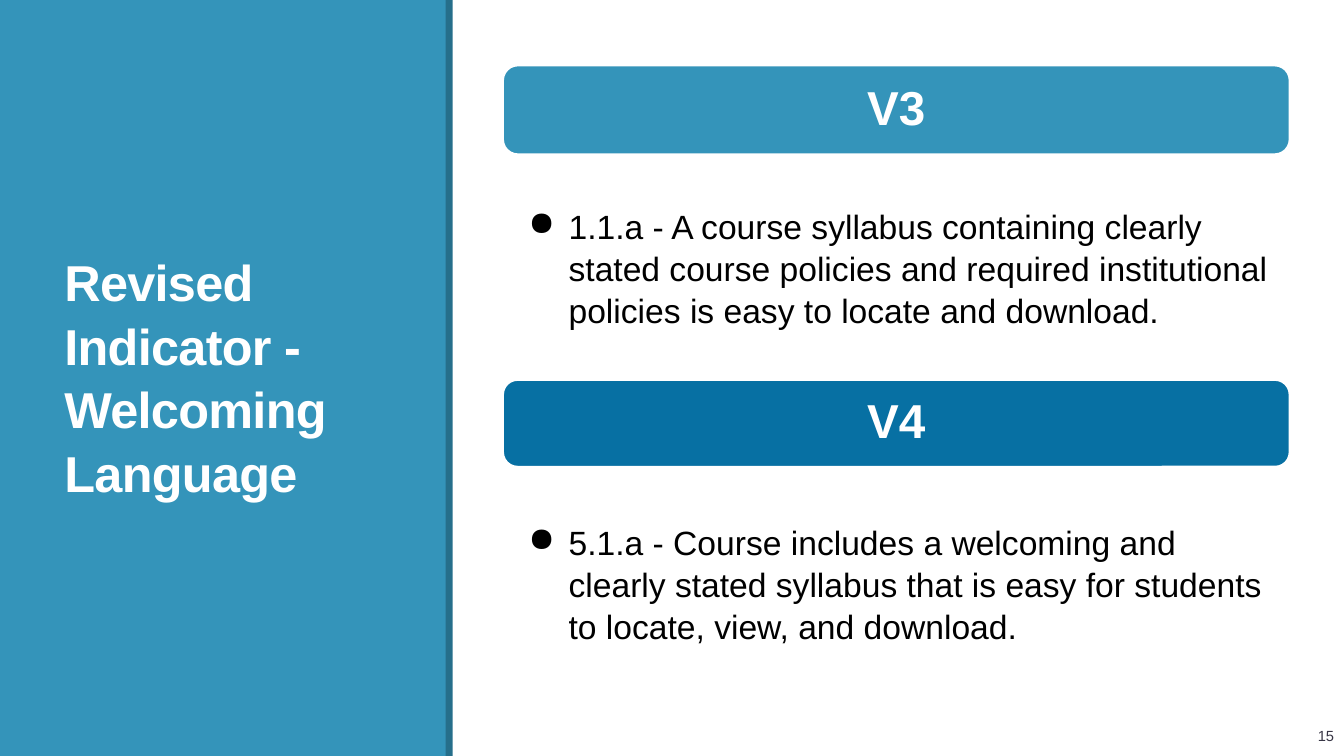
from lxml import etree
from pptx import Presentation
from pptx import util as u
from pptx.dml.color import RGBColor
from pptx.enum import shapes, text
from pptx.oxml import ns

WHITE = RGBColor(0xFF, 0xFF, 0xFF)
BLACK = RGBColor(0x00, 0x00, 0x00)
SLATE = RGBColor(0x37, 0x35, 0x45)
TEAL = RGBColor(0x34, 0x94, 0xBA)
DARK_TEAL = RGBColor(0x26, 0x6F, 0x8B)
BLUE = RGBColor(0x07, 0x70, 0xA3)

SECTION_LEFT, SECTION_WIDTH = 4.99, 7.8
# heading, colour, bar top, bar height, body height, body
SECTIONS = [
    ("V3", TEAL, 0.65, 0.88, 2.24,
     "1.1.a - A course syllabus containing clearly stated course policies "
     "and required institutional policies is easy to locate and download."),
    ("V4", BLUE, 3.77, 0.86, 2.31,
     "5.1.a - Course includes a welcoming and clearly stated syllabus "
     "that is easy for students to locate, view, and download."),
]


class SlideBuilder:
    font_name = "Arial"

    def __init__(self, presentation):
        self.slide = presentation.slides.add_slide(presentation.slide_layouts[6])

    def block(self, box, color, kind=shapes.MSO_SHAPE.RECTANGLE, outline=None):
        shape = self.slide.shapes.add_shape(kind, *map(u.Inches, box))
        shape.shadow.inherit = False
        shape.fill.solid()
        shape.fill.fore_color.rgb = color
        if outline is None:
            shape.line.fill.background()
        else:
            shape.line.color.rgb = outline
            shape.line.width = u.Pt(1.25)
        return shape

    def fill_text(self, shape, content, size, color, bold=False,
                  align=text.PP_ALIGN.LEFT, margins=(0.1, 0.05, 0.1, 0.05),
                  line_spacing=1.0, space_after=0):
        """Fill a shape with one vertically centred paragraph and return it."""
        frame = shape.text_frame
        frame.text = content
        frame.word_wrap = True
        frame.vertical_anchor = text.MSO_ANCHOR.MIDDLE
        (frame.margin_left, frame.margin_top,
         frame.margin_right, frame.margin_bottom) = map(u.Inches, margins)
        paragraph = frame.paragraphs[0]
        paragraph.alignment = align
        paragraph.line_spacing = line_spacing
        paragraph.space_after = u.Pt(space_after)
        font = paragraph.runs[0].font
        font.name, font.size, font.bold = self.font_name, u.Pt(size), bold
        font.color.rgb = color
        return paragraph

    def label(self, box, content, size, color, **style):
        shape = self.slide.shapes.add_textbox(*map(u.Inches, box))
        return self.fill_text(shape, content, size, color, **style)

    def title(self, box, content):
        paragraph = self.label(box, content, 36, WHITE, bold=True, line_spacing=1.05)
        paragraph.runs[0]._r.get_or_add_rPr().set("spc", "-50")

    def bullet(self, box, content):
        paragraph = self.label(box, content, 24, BLACK, line_spacing=1.05,
                               space_after=12, margins=(0.25, 0.03, 0.19, 0.03))
        properties = paragraph._p.get_or_add_pPr()
        properties.set("marL", str(u.Inches(0.4)))
        properties.set("indent", str(-u.Inches(0.4)))
        etree.SubElement(properties, ns.qn("a:buChar"), char="●")

    def section(self, heading, color, top, bar_height, body_height, body):
        bar = self.block((SECTION_LEFT, top, SECTION_WIDTH, bar_height), color,
                         shapes.MSO_SHAPE.ROUNDED_RECTANGLE, WHITE)
        self.fill_text(bar, heading, 34, WHITE, bold=True, align=text.PP_ALIGN.CENTER,
                       margins=(0.14,) * 4, line_spacing=0.9, space_after=12)
        self.bullet((SECTION_LEFT, top + bar_height, SECTION_WIDTH, body_height), body)


def main():
    presentation = Presentation()
    presentation.slide_width = u.Inches(13.33)
    presentation.slide_height = u.Inches(7.5)

    builder = SlideBuilder(presentation)
    builder.block((0, 0, 4.43, 7.5), TEAL)
    builder.title((0.54, 0.57, 3.37, 6.31), "Revised Indicator - Welcoming Language")
    builder.block((4.42, 0, 0.07, 7.5), DARK_TEAL)
    builder.label((12.14, 7.1, 1.19, 0.4), "15", 10.5, SLATE,
                  align=text.PP_ALIGN.RIGHT, space_after=6)
    for section in SECTIONS:
        builder.section(*section)

    presentation.save("out.pptx")


if __name__ == "__main__":
    main()
